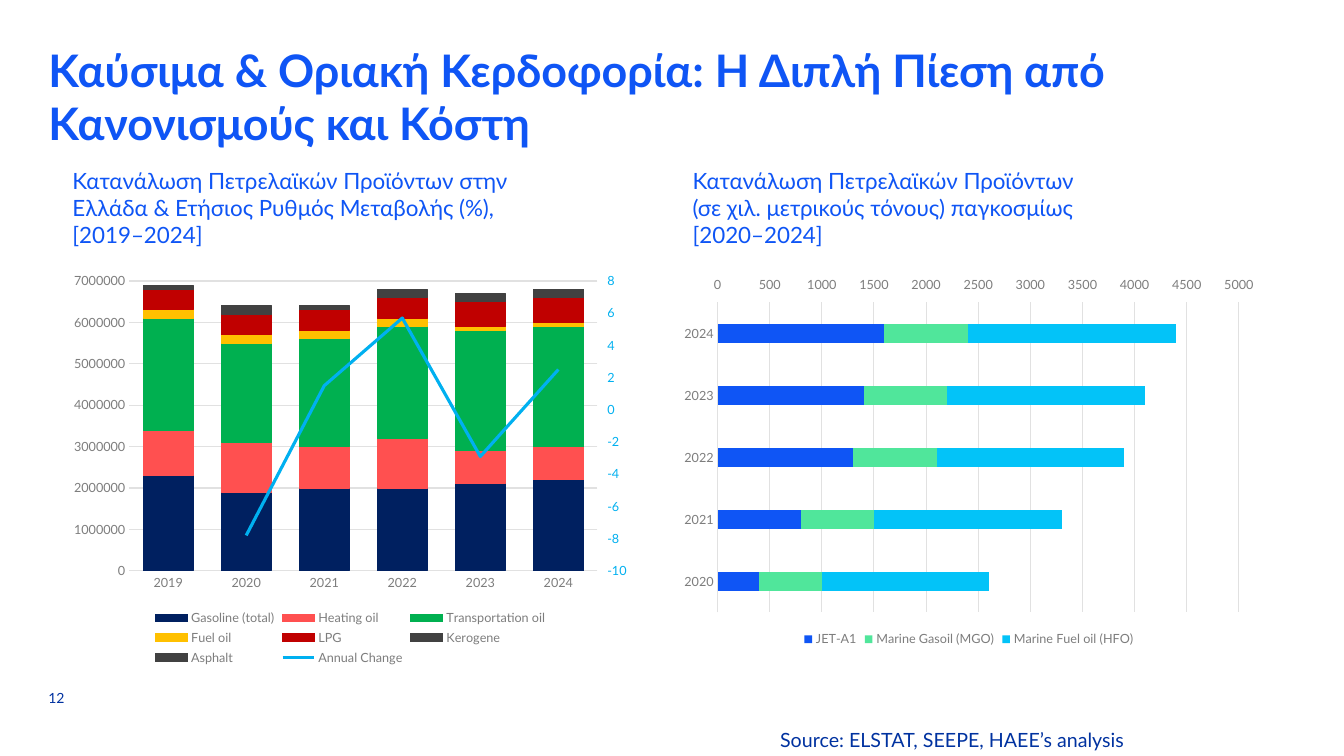
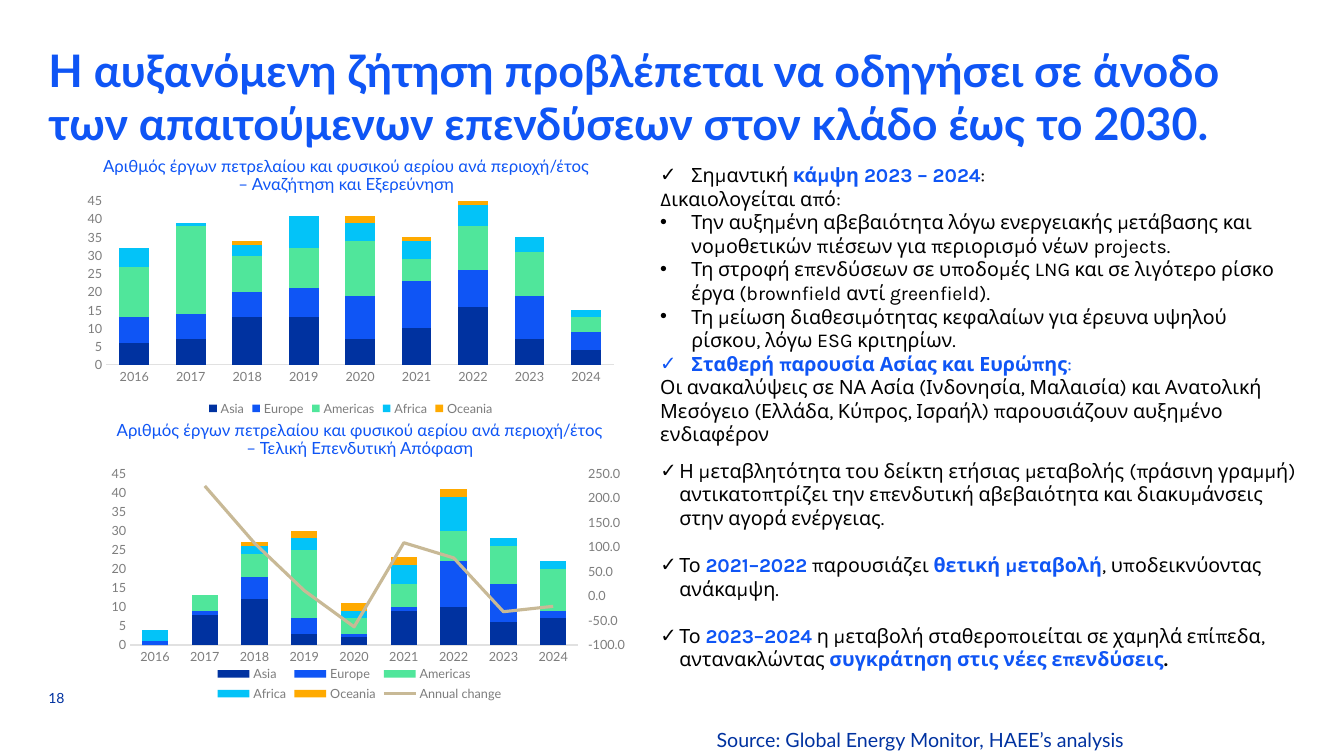
from dataclasses import dataclass
from typing import NamedTuple, Optional

from pptx import Presentation
from pptx.chart.chart import Chart
from pptx.chart.data import CategoryChartData
from pptx.dml.color import RGBColor
from pptx.enum.chart import (XL_CHART_TYPE, XL_LEGEND_POSITION, XL_MARKER_STYLE,
                             XL_TICK_LABEL_POSITION, XL_TICK_MARK)
from pptx.enum.text import MSO_ANCHOR, MSO_AUTO_SIZE, PP_ALIGN
from pptx.oxml import parse_xml
from pptx.oxml.ns import nsdecls, qn
from pptx.slide import Slide
from pptx.text.text import Font, TextFrame
from pptx.util import Inches, Pt

BLUE, NAVY, BLACK = "0F55F5", "0032A0", "000000"
GREEN, CYAN, ORANGE, SAND, SKY = "50E69B", "03C3F8", "FFAA00", "C8B996", "00B0F0"
CHART_TEXT, AXIS_TEXT, GRID = "373737", "7D7D7D", "E1E1E1"
HEAD_FONT, BODY_FONT = "Lato", "Karla"


class Box(NamedTuple):
    left: float
    top: float
    width: float
    height: float

    def lengths(self) -> list:
        return [Inches(value) for value in self]


class Run(NamedTuple):
    text: str
    color: Optional[str] = None
    bold: bool = False


class Para(NamedTuple):
    runs: list
    bullet: str = ""
    hang: float = 0.31


class Scale(NamedTuple):
    low: float
    high: float
    step: float


class Series(NamedTuple):
    name: str
    values: list
    color: str


@dataclass
class RightLine:
    """A yearly change, drawn as a line against its own axis on the right."""
    series: Series
    scale: Scale
    axis_color: str = AXIS_TEXT
    number_format: str = "General"


@dataclass
class StackedChart:
    box: Box
    years: range
    series: list
    scale: Scale
    gap: int
    kind: XL_CHART_TYPE = XL_CHART_TYPE.COLUMN_STACKED
    grid: bool = False
    outlined: bool = False
    labels_high: bool = False
    change: Optional[RightLine] = None
    plot_area: Optional[Box] = None


def rgb(color: str) -> RGBColor:
    return RGBColor.from_string(color)


def set_font(font: Font, size: float, color: str, name: str = HEAD_FONT,
             bold: bool = False) -> None:
    font.name, font.size, font.bold = name, Pt(size), bold
    font.color.rgb = rgb(color)


def key(text: str) -> Run:
    return Run(text, BLUE, True)


def write(frame: TextFrame, paras: list, *, size: float, color: str,
          font: str = HEAD_FONT, bold: bool = False, align: PP_ALIGN = PP_ALIGN.LEFT,
          anchor: MSO_ANCHOR = MSO_ANCHOR.TOP, inset: tuple = (0.1, 0.05),
          gap: float = 0, line_spacing: float = 1, indent: float = 0) -> None:
    """Fill a frame; a newline inside a run becomes a line break."""
    frame.word_wrap = True
    frame.auto_size = MSO_AUTO_SIZE.NONE
    frame.vertical_anchor = anchor
    frame.margin_left = frame.margin_right = Inches(inset[0])
    frame.margin_top = frame.margin_bottom = Inches(inset[1])
    for index, para in enumerate(paras):
        paragraph = frame.add_paragraph() if index else frame.paragraphs[0]
        properties = paragraph._p.get_or_add_pPr()
        if para.bullet:
            properties.append(parse_xml(f'<a:buFont {nsdecls("a")} typeface="Arial"/>'))
            properties.append(parse_xml(f'<a:buChar {nsdecls("a")} char="{para.bullet}"/>'))
            properties.set("marL", str(Inches(para.hang)))
            properties.set("indent", str(-Inches(para.hang)))
        elif indent:
            properties.set("marL", str(Inches(indent)))
        paragraph.alignment = align
        paragraph.line_spacing = line_spacing
        paragraph.space_before = Pt(gap if index else 0)
        for piece in para.runs:
            for line_index, line in enumerate(piece.text.split("\n")):
                if line_index:
                    paragraph.add_line_break()
                run = paragraph.add_run()
                run.text = line
                set_font(run.font, size, piece.color or color, font, bold or piece.bold)


def add_text(slide: Slide, box: Box, content, **style) -> None:
    paras = [Para([Run(content)])] if isinstance(content, str) else content
    write(slide.shapes.add_textbox(*box.lengths()).text_frame, paras, **style)


def add_slide(deck: Presentation, title: str, number: str, source: str) -> Slide:
    slide = deck.slides.add_slide(deck.slide_layouts[5])
    heading = slide.shapes.title
    heading.left, heading.top, heading.width, heading.height = Box(
        0.48, 0.42, 12.36, 1.08).lengths()
    write(heading.text_frame, [Para([Run(title)])], size=32, color=BLUE, bold=True,
          inset=(0, 0))
    add_text(slide, Box(0.48, 6.84, 0.28, 0.17), number, size=10, color=NAVY,
             anchor=MSO_ANCHOR.BOTTOM, inset=(0, 0))
    add_text(slide, Box(1.92, 7.17, 9.33, 0.33), source, size=14, color=NAVY,
             align=PP_ALIGN.RIGHT)
    return slide


def move_last_series_to_right_axis(chart: Chart, change: RightLine) -> None:
    """Call last: afterwards chart.value_axis means the right axis."""
    plot_area = chart._chartSpace.chart.plotArea
    bars = plot_area.find(qn("c:barChart"))
    series = bars.findall(qn("c:ser"))[-1]
    for inverted in series.findall(qn("c:invertIfNegative")):
        series.remove(inverted)
    line_chart = parse_xml(
        f'<c:lineChart {nsdecls("c")}><c:grouping val="standard"/><c:varyColors val="0"/>'
        '<c:marker val="1"/><c:axId val="5001"/><c:axId val="5002"/></c:lineChart>')
    line_chart.insert(2, series)
    bars.addnext(line_chart)
    scale = change.scale
    right_axis = parse_xml(
        f'<c:valAx {nsdecls("c", "a")}><c:axId val="5002"/><c:scaling>'
        f'<c:orientation val="minMax"/><c:max val="{scale.high}"/><c:min val="{scale.low}"/>'
        '</c:scaling><c:delete val="0"/><c:axPos val="r"/>'
        f'<c:numFmt formatCode="{change.number_format}" sourceLinked="0"/>'
        '<c:majorTickMark val="out"/><c:minorTickMark val="none"/><c:tickLblPos val="nextTo"/>'
        '<c:spPr><a:ln><a:noFill/></a:ln></c:spPr><c:txPr><a:bodyPr/><a:p><a:pPr>'
        f'<a:defRPr sz="900"><a:solidFill><a:srgbClr val="{change.axis_color}"/></a:solidFill>'
        f'<a:latin typeface="{HEAD_FONT}"/></a:defRPr></a:pPr><a:endParaRPr lang="el-GR"/></a:p>'
        '</c:txPr><c:crossAx val="5001"/><c:crosses val="max"/><c:crossBetween val="between"/>'
        f'<c:majorUnit val="{scale.step}"/></c:valAx>')
    hidden_axis = parse_xml(
        f'<c:catAx {nsdecls("c")}><c:axId val="5001"/><c:scaling>'
        '<c:orientation val="minMax"/></c:scaling><c:delete val="1"/><c:axPos val="b"/>'
        '<c:majorTickMark val="none"/><c:minorTickMark val="none"/><c:tickLblPos val="nextTo"/>'
        '<c:crossAx val="5002"/><c:crosses val="autoZero"/></c:catAx>')
    left_axis = plot_area.find(qn("c:valAx"))
    left_axis.addnext(right_axis)
    right_axis.addnext(hidden_axis)
    line = chart.plots[1].series[0]
    line.format.line.color.rgb = rgb(change.series.color)
    line.format.line.width = Pt(2.25)
    line.marker.style = XL_MARKER_STYLE.NONE
    line.smooth = False


def fix_plot_area(chart: Chart, area: Box) -> None:
    """Place the inner plot area, in fractions of the chart."""
    plot_area = chart._chartSpace.chart.plotArea
    for layout in plot_area.findall(qn("c:layout")):
        plot_area.remove(layout)
    places = "".join(f'<c:{tag} val="{value}"/>' for tag, value in zip("xywh", area))
    plot_area.insert(0, parse_xml(
        f'<c:layout {nsdecls("c")}><c:manualLayout><c:layoutTarget val="inner"/>'
        f'<c:xMode val="edge"/><c:yMode val="edge"/>{places}</c:manualLayout></c:layout>'))


def add_stacked_chart(slide: Slide, plan: StackedChart) -> None:
    data = CategoryChartData()
    data.categories = [str(year) for year in plan.years]
    for series in plan.series + ([plan.change.series] if plan.change else []):
        data.add_series(series.name, series.values)
    chart = slide.shapes.add_chart(plan.kind, *plan.box.lengths(), data).chart
    chart.has_title = False
    set_font(chart.font, 10, CHART_TEXT)

    stack = chart.plots[0]
    stack.gap_width, stack.overlap, stack.vary_by_categories = plan.gap, 100, False
    for drawn, series in zip(stack.series, plan.series):
        drawn.format.fill.solid()
        drawn.format.fill.fore_color.rgb = rgb(series.color)
        if plan.outlined:
            drawn.format.line.color.rgb = rgb(series.color)
            drawn.format.line.width = Pt(0.75)

    years, amounts = chart.category_axis, chart.value_axis
    for axis in (years, amounts):
        axis.major_tick_mark = axis.minor_tick_mark = XL_TICK_MARK.NONE
        set_font(axis.tick_labels.font, 9, AXIS_TEXT)
    years.format.line.color.rgb = rgb(GRID)
    years.format.line.width = Pt(0.75)
    amounts.format.line.fill.background()
    amounts.minimum_scale, amounts.maximum_scale, amounts.major_unit = plan.scale
    amounts.has_major_gridlines = plan.grid
    if plan.grid:
        amounts.major_gridlines.format.line.color.rgb = rgb(GRID)
        amounts.major_gridlines.format.line.width = Pt(0.75)
    if plan.labels_high:
        amounts.tick_label_position = XL_TICK_LABEL_POSITION.HIGH

    chart.has_legend = True
    chart.legend.position = XL_LEGEND_POSITION.BOTTOM
    chart.legend.include_in_layout = False
    set_font(chart.legend.font, 9, AXIS_TEXT)
    if plan.plot_area:
        fix_plot_area(chart, plan.plot_area)
    if plan.change:
        move_last_series_to_right_axis(chart, plan.change)


def scaled(factor: int, *values: float) -> list:
    return [value * factor for value in values]


def build_fuel_slide(deck: Presentation) -> None:
    slide = add_slide(deck, "Καύσιμα & Οριακή Κερδοφορία: Η Διπλή Πίεση από Κανονισμούς και Κόστη",
                      "12", "Source: ELSTAT, SEEPE, HAEE’s analysis")
    add_text(slide, Box(0.62, 1.61, 5.03, 0.91), "Κατανάλωση Πετρελαϊκών Προϊόντων στην Ελλάδα "
             "& Ετήσιος Ρυθμός Μεταβολής (%), [2019–2024]", size=16, color=BLUE)
    add_text(slide, Box(6.77, 1.61, 4.28, 0.91), "Κατανάλωση Πετρελαϊκών Προϊόντων (σε χιλ. "
             "μετρικούς τόνους) παγκοσμίως\n[2020–2024]", size=16, color=BLUE)
    tons = 100_000
    add_stacked_chart(slide, StackedChart(
        Box(0.62, 2.63, 5.71, 4.01), range(2019, 2025), [
            Series("Gasoline (total)", scaled(tons, 23, 19, 20, 20, 21, 22), "002060"),
            Series("Heating oil", scaled(tons, 11, 12, 10, 12, 8, 8), "FF5050"),
            Series("Transportation oil", scaled(tons, 27, 24, 26, 27, 29, 29), "00B050"),
            Series("Fuel oil", scaled(tons, 2, 2, 2, 2, 1, 1), "FFC000"),
            Series("LPG", scaled(tons, 5, 5, 5, 5, 6, 6), "C00000"),
            Series("Kerogene", [0] * 6, "414141"),
            Series("Asphalt", scaled(tons, 1, 2, 1, 2, 2, 2), "414141"),
        ], Scale(0, 7_000_000, 1_000_000), gap=55, grid=True, outlined=True,
        change=RightLine(Series("Annual Change", [None, -7.8, 1.5, 5.7, -2.9, 2.5], SKY),
                         Scale(-10, 8, 2), axis_color=SKY)))
    add_stacked_chart(slide, StackedChart(
        Box(6.67, 2.67, 5.88, 3.79), range(2020, 2025), [
            Series("JET-A1", [400, 800, 1300, 1400, 1600], BLUE),
            Series("Marine Gasoil (MGO)", [600, 700, 800, 800, 800], GREEN),
            Series("Marine Fuel oil (HFO)", [1600, 1800, 1800, 1900, 2000], CYAN),
        ], Scale(0, 5000, 500), gap=219, kind=XL_CHART_TYPE.BAR_STACKED, grid=True,
        labels_high=True))


def by_region(*rows: list) -> list:
    regions = ("Asia", "Europe", "Americas", "Africa", "Oceania")
    return [Series(*row) for row in zip(regions, rows, (NAVY, BLUE, GREEN, CYAN, ORANGE))]


def build_investment_slide(deck: Presentation) -> None:
    slide = add_slide(deck, "Η αυξανόμενη ζήτηση προβλέπεται να οδηγήσει σε άνοδο των απαιτούμενων "
                      "επενδύσεων στον κλάδο έως το 2030.", "18",
                      "Source: Global Energy Monitor, HAEE’s analysis")
    years, projects = range(2016, 2025), Scale(0, 45, 5)
    add_stacked_chart(slide, StackedChart(
        Box(0.76, 1.87, 5.44, 2.3), years, by_region(
            [6, 7, 13, 13, 7, 10, 16, 7, 4], [7, 7, 7, 8, 12, 13, 10, 12, 5],
            [14, 24, 10, 11, 15, 6, 12, 12, 4], [5, 1, 3, 9, 5, 5, 6, 4, 2],
            [None, None, 1, None, 2, 1, 1, None, None]), projects, gap=89))
    add_stacked_chart(slide, StackedChart(
        Box(0.92, 4.5, 5.29, 2.5), years, by_region(
            [0, 8, 12, 3, 2, 9, 10, 6, 7], [1, 1, 6, 4, 1, 1, 12, 10, 2],
            [0, 4, 6, 18, 4, 6, 8, 10, 11], [3, 0, 2, 3, 2, 5, 9, 2, 2],
            [0, 0, 1, 2, 2, 2, 2, 0, 0]), projects, gap=89,
        change=RightLine(Series("Annual change", [None, 225, 108, 11, -63, 109, 78, -32, -21], SAND),
                         Scale(-100, 250, 50), number_format="0.0"),
        plot_area=Box(0.07, 0.08, 0.84, 0.68)))
    for box, stage in ((Box(0.79, 1.59, 5.17, 0.32), "Αναζήτηση και Εξερεύνηση"),
                       (Box(0.76, 4.15, 5.5, 0.44), "Τελική Επενδυτική Απόφαση")):
        add_text(slide, box, f"Αριθμός έργων πετρελαίου και φυσικού αερίου ανά περιοχή/έτος\n– {stage}",
                 size=12, color=BLUE, align=PP_ALIGN.CENTER, anchor=MSO_ANCHOR.MIDDLE,
                 inset=(0.08, 0.04), line_spacing=0.9, indent=0.12)
    body = dict(size=14, color=BLACK, font=BODY_FONT)
    add_text(slide, Box(6.45, 4.5, 6.51, 2.22), [Para(runs, "✓", 0.19) for runs in (
        [Run("Η μεταβλητότητα του δείκτη ετήσιας μεταβολής (πράσινη γραμμή) αντικατοπτρίζει την "
             "επενδυτική αβεβαιότητα και διακυμάνσεις στην αγορά ενέργειας.")],
        [Run("Το "), key("2021–2022"), Run(" παρουσιάζει "), key("θετική μεταβολή"),
         Run(", υποδεικνύοντας ανάκαμψη.")],
        [Run("Το "), key("2023–2024"), Run(" η μεταβολή σταθεροποιείται σε χαμηλά επίπεδα, "
         "αντανακλώντας "), key("συγκράτηση στις νέες επενδύσεις"), Run(".", bold=True)],
    )], gap=17, **body)
    add_text(slide, Box(6.45, 1.57, 6.44, 2.69), [
        Para([Run("Σημαντική "), key("κάμψη 2023 – 2024"), Run(":")], "✓"),
        Para([Run("Δικαιολογείται από:")]),
        Para([Run("Την αυξημένη αβεβαιότητα λόγω ενεργειακής μετάβασης και νομοθετικών πιέσεων για "
                  "περιορισμό νέων projects.")], "•"),
        Para([Run("Τη στροφή επενδύσεων σε υποδομές LNG και σε λιγότερο ρίσκο έργα (brownfield αντί "
                  "greenfield).")], "•"),
        Para([Run("Τη μείωση διαθεσιμότητας κεφαλαίων για έρευνα υψηλού ρίσκου, λόγω ESG "
                  "κριτηρίων.")], "•"),
        Para([key("Σταθερή παρουσία Ασίας και Ευρώπης"), Run(":", BLUE)], "✓"),
        Para([Run("Οι ανακαλύψεις σε ΝΑ Ασία (Ινδονησία, Μαλαισία) και Ανατολική Μεσόγειο (Ελλάδα, "
                  "Κύπρος, Ισραήλ) παρουσιάζουν αυξημένο ενδιαφέρον")]),
    ], **body)


def main() -> None:
    deck = Presentation()
    deck.slide_width, deck.slide_height = Inches(13.33), Inches(7.5)
    build_fuel_slide(deck)
    build_investment_slide(deck)
    deck.save("out.pptx")


if __name__ == "__main__":
    main()
